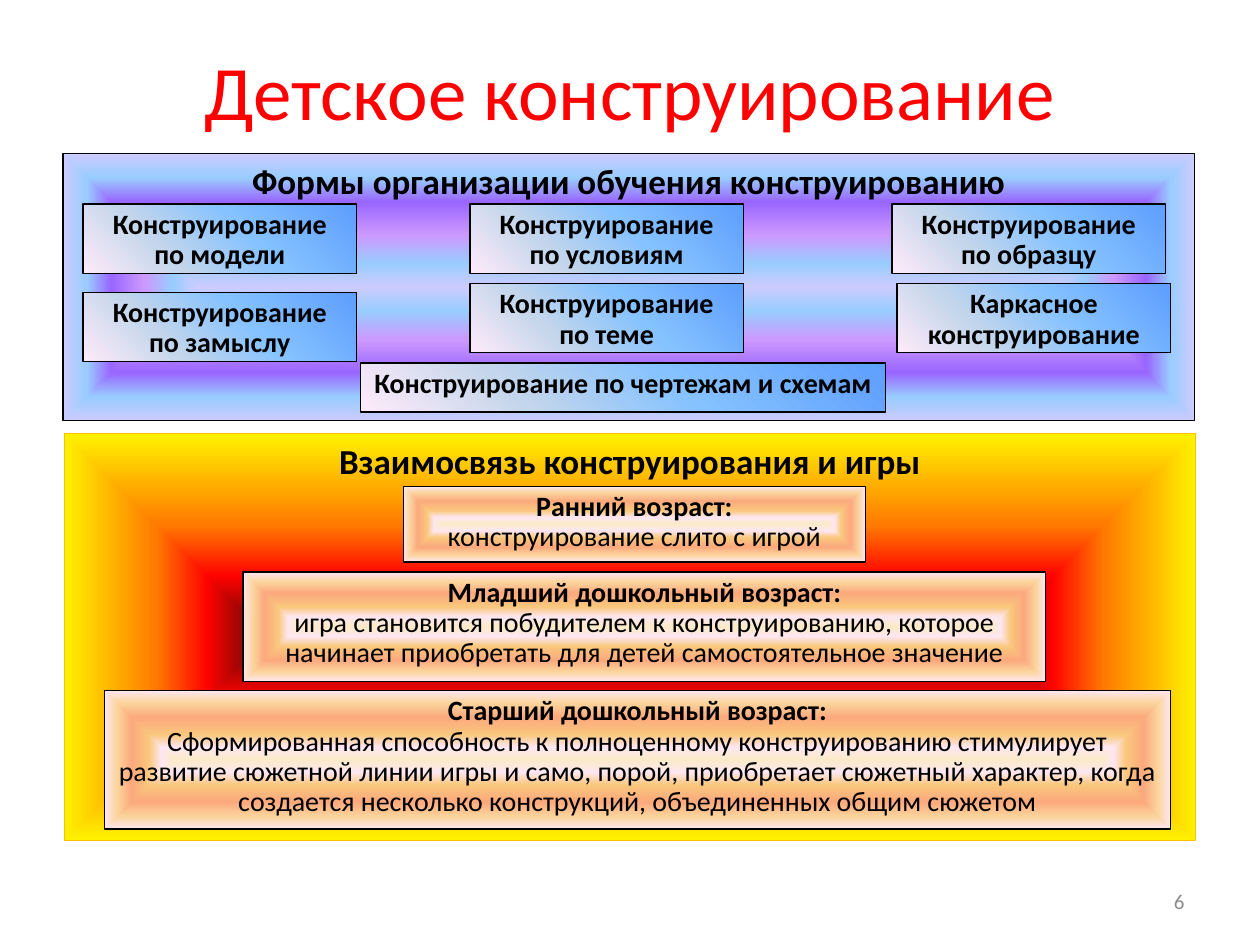
from collections import namedtuple

from lxml import etree
from pptx import Presentation
from pptx import util as u
from pptx.dml.color import RGBColor
from pptx.enum import shapes, text
from pptx.oxml import ns

Box = namedtuple("Box", "left top width height")  # percent of the slide's size
SLIDE_W, SLIDE_H = u.Inches(10), u.Inches(7.5)

BLACK = RGBColor(0x00, 0x00, 0x00)
RED = RGBColor(0xFF, 0x00, 0x00)
GREY = RGBColor(0x8C, 0x8C, 0x8C)
GOLD = RGBColor(0xFF, 0xC0, 0x00)

# Gradients: position in percent -> colour
VIOLET = {0: RGBColor(0xCC, 0xCC, 0xFF), 18: RGBColor(0x99, 0xCC, 0xFF),
          39: RGBColor(0xCC, 0x99, 0xFF), 64: RGBColor(0x99, 0x66, 0xFF),
          82: RGBColor(0x99, 0xCC, 0xFF), 100: RGBColor(0xCC, 0xCC, 0xFF)}
SKY = {0: RGBColor(0xFF, 0xEB, 0xFA), 30: RGBColor(0xC4, 0xD6, 0xEB),
       60: RGBColor(0x85, 0xC2, 0xFF), 100: RGBColor(0x5E, 0x9E, 0xFF)}
FIRE = {0: RGBColor(0x4D, 0x08, 0x08), 30: RGBColor(0xFF, 0x03, 0x00),
        55: RGBColor(0xFF, 0x7A, 0x00), 100: RGBColor(0xFF, 0xF2, 0x00)}
PEACH = {0: RGBColor(0xFB, 0xEA, 0xC7), 18: RGBColor(0xFE, 0xE7, 0xF2),
         36: RGBColor(0xFA, 0xC7, 0x7D), 61: RGBColor(0xFB, 0xA9, 0x7D),
         82: RGBColor(0xFB, 0xD4, 0x9C), 100: RGBColor(0xFE, 0xE7, 0xF2)}

LEFT_COL, MIDDLE_COL, RIGHT_COL = 1.6, 32.3, 65.8
FORM_W, FORM_H = 21.7, 7.33
FORMS = [
    ("Конструирование по модели", Box(LEFT_COL, 5.33, FORM_W, FORM_H)),
    ("Конструирование по условиям", Box(MIDDLE_COL, 5.33, FORM_W, FORM_H)),
    ("Конструирование по образцу", Box(RIGHT_COL, 5.33, FORM_W, FORM_H)),
    ("Конструирование по замыслу", Box(LEFT_COL, 14.67, FORM_W, FORM_H)),
    ("Конструирование по теме", Box(MIDDLE_COL, 13.73, FORM_W, FORM_H)),
    ("Каркасное конструирование", Box(RIGHT_COL + 0.4, 13.73, FORM_W, FORM_H)),
    ("Конструирование по чертежам и схемам", Box(23.6, 22.13, 41.7, 5.2)),
]
AGES = [
    ("Ранний возраст:", "конструирование слито с игрой", Box(26.9, 5.6, 36.7, 8)),
    ("Младший дошкольный возраст:",
     "игра становится побудителем к конструированию, которое начинает "
     "приобретать для детей самостоятельное значение",
     Box(14.2, 14.67, 63.7, 11.6)),
    ("Старший дошкольный возраст:",
     "Сформированная способность к полноценному конструированию стимулирует "
     "развитие сюжетной линии игры и само, порой, приобретает сюжетный "
     "характер, когда создается несколько конструкций, объединенных общим сюжетом",
     Box(3.2, 27.2, 84.6, 14.67)),
]


def inside(panel, box):
    """Move a box given from the panel's corner to slide coordinates."""
    return box._replace(left=panel.left + box.left, top=panel.top + box.top)


def to_emu(box):
    return (int(SLIDE_W * box.left / 100), int(SLIDE_H * box.top / 100),
            int(SLIDE_W * box.width / 100), int(SLIDE_H * box.height / 100))


def fill_gradient(shape, stops, angle=None):
    """Linear gradient at a clockwise angle, or from the centre outwards."""
    shape.fill.gradient()
    gradient = shape.fill._xPr.find(ns.qn("a:gradFill"))
    for child in list(gradient):
        gradient.remove(child)
    stop_list = etree.SubElement(gradient, ns.qn("a:gsLst"))
    for position, colour in stops.items():
        stop = etree.SubElement(stop_list, ns.qn("a:gs"), pos=str(position * 1000))
        etree.SubElement(stop, ns.qn("a:srgbClr"), val=str(colour))
    if angle is None:
        route = etree.SubElement(gradient, ns.qn("a:path"), path="rect")
        etree.SubElement(route, ns.qn("a:fillToRect"),
                         dict.fromkeys("ltrb", "50000"))
    else:
        etree.SubElement(gradient, ns.qn("a:lin"), ang=str(angle * 60000), scaled="0")


def write(frame, lines, size, colour=BLACK, align=text.PP_ALIGN.CENTER,
          spacing=None, anchor=text.MSO_ANCHOR.TOP):
    """Fill a text frame with one paragraph for each (words, bold) pair."""
    frame.word_wrap = True
    frame.vertical_anchor = anchor
    for index, (words, bold) in enumerate(lines):
        paragraph = frame.add_paragraph() if index else frame.paragraphs[0]
        paragraph.alignment = align
        paragraph.line_spacing = spacing
        run = paragraph.add_run()
        run.text = words
        run.font.name = "Calibri"
        run.font.size = u.Pt(size)
        run.font.bold = bold
        run.font.color.rgb = colour


def add_block(slide, box, stops, lines, size=16, spacing=0.9, angle=None, border=BLACK):
    block = slide.shapes.add_shape(shapes.MSO_SHAPE.RECTANGLE, *to_emu(box))
    block.shadow.inherit = False
    fill_gradient(block, stops, angle)
    block.line.color.rgb = border
    block.line.width = u.Pt(0.75)
    write(block.text_frame, lines, size, spacing=spacing)


def add_title(slide, box):
    title = slide.shapes.add_textbox(*to_emu(box))
    write(title.text_frame, [("Детское конструирование", False)], 44, RED)


def add_forms_panel(slide, panel):
    add_block(slide, panel, VIOLET,
              [("Формы организации обучения конструированию", True)], 20, None)
    for form, box in FORMS:
        add_block(slide, inside(panel, box), SKY, [(form, True)], angle=315)


def add_ages_panel(slide, panel):
    add_block(slide, panel, FIRE,
              [("Взаимосвязь конструирования и игры", True)], 20, None, border=GOLD)
    for age, description, box in AGES:
        add_block(slide, inside(panel, box), PEACH, [(age, True), (description, False)])


def add_page_number(slide, box):
    number = slide.shapes.add_textbox(*to_emu(box))
    write(number.text_frame, [("6", False)], 12, GREY,
          text.PP_ALIGN.RIGHT, anchor=text.MSO_ANCHOR.MIDDLE)


def main():
    deck = Presentation()
    deck.slide_width, deck.slide_height = SLIDE_W, SLIDE_H
    slide = deck.slides.add_slide(deck.slide_layouts[6])
    add_title(slide, Box(5, 4, 90, 16.67))
    add_forms_panel(slide, Box(5, 16.27, 89.8, 28.27))
    add_ages_panel(slide, Box(5.1, 45.87, 89.8, 43.07))
    add_page_number(slide, Box(71.7, 92.67, 23.3, 5.33))
    deck.save("out.pptx")


if __name__ == "__main__":
    main()
